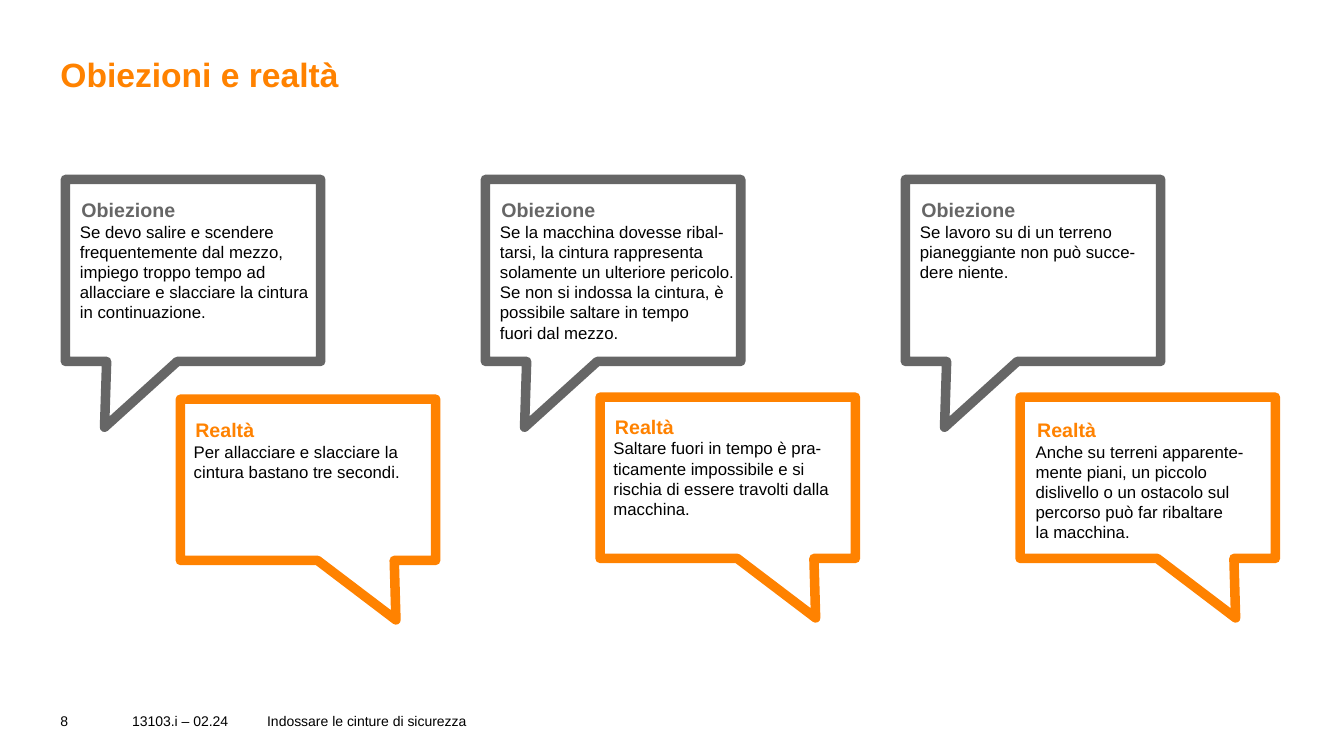
"""Build the slide that answers three objections to seat belts with speech bubbles."""

from dataclasses import dataclass

import pptx
import pptx.dml.color
import pptx.enum.text
import pptx.oxml.ns
import pptx.shapes.autoshape
import pptx.slide
import pptx.text.text
import pptx.util
from lxml import etree

Pt = pptx.util.Pt


@dataclass(frozen=True)
class Theme:
    font: str = "Arial"
    orange: str = "FF8200"
    grey: str = "666666"
    black: str = "000000"
    white: str = "FFFFFF"
    title: float = 24
    heading: float = 14
    body: float = 12
    footer: float = 10
    outline: float = 6.8


@dataclass(frozen=True)
class BubbleKind:
    heading: str
    color: str
    points: tuple[tuple[float, float], ...]


@dataclass(frozen=True)
class Bubble:
    kind: BubbleKind
    left: float
    top: float
    text_left: float
    text_top: float
    body: str


@dataclass(frozen=True)
class Label:
    text: str
    left: float
    width: float


THEME = Theme()
PITCH = 300
OBJECTION = BubbleKind("Obiezione", THEME.grey, (
    (182.4, 0), (0, 0), (0, 130), (29.5, 130), (28, 177), (80, 130), (182.4, 130)))
REALITY = BubbleKind("Realtà", THEME.orange, (
    (0, 0), (182.4, 0), (182.4, 115.2), (152.8, 115.2), (154, 157.7), (98, 115.2), (0, 115.2)))

OBJECTIONS = (
    "Se devo salire e scendere\nfrequentemente dal mezzo,\nimpiego troppo tempo ad\n"
    "allacciare e slacciare la cintura\nin continuazione.",
    "Se la macchina dovesse ribal-\ntarsi, la cintura rappresenta\n"
    "solamente un ulteriore pericolo.\nSe non si indossa la cintura, è\n"
    "possibile saltare in tempo\nfuori dal mezzo.",
    "Se lavoro su di un terreno\npianeggiante non può succe-\ndere niente.",
)
REALITIES = (
    Bubble(REALITY, 128.8, 285.1, 131.7, 295.2,
           "Per allacciare e slacciare la\ncintura bastano tre secondi."),
    Bubble(REALITY, 428.6, 283.7, 431.5, 293,
           "Saltare fuori in tempo è pra-\nticamente impossibile e si\n"
           "rischia di essere travolti dalla\nmacchina."),
    Bubble(REALITY, 728.6, 283.7, 733, 295.2,
           "Anche su terreni apparente-\nmente piani, un piccolo\n"
           "dislivello o un ostacolo sul\npercorso può far ribaltare\nla macchina."),
)
BUBBLES = tuple(
    Bubble(OBJECTION, 46.7 + i * PITCH, 128.2, 50.4 + i * PITCH, 138.2, body)
    for i, body in enumerate(OBJECTIONS)
) + REALITIES
FOOTER = (
    Label("13103.i – 02.24", 94.3, 85),
    Label("Indossare le cinture di sicurezza", 190.8, 617.8),
    Label("8", 43.2, 39.6),
)


def rgb(color: str) -> pptx.dml.color.RGBColor:
    """Turn a hex string into a colour."""
    return pptx.dml.color.RGBColor.from_string(color)


def write(p: pptx.text.text._Paragraph, text: str, *, size: float,
          color: str = THEME.black, bold: bool = False,
          spacing: float | None = None, indent: float = 0) -> None:
    """Write text into a paragraph, with a line break at each newline."""
    if indent:
        p._p.get_or_add_pPr().set("marL", str(Pt(indent)))
    if spacing:
        p.line_spacing = Pt(spacing)
    for i, line in enumerate(text.split("\n")):
        if i:
            p.add_line_break()
        r = p.add_run()
        r.text = line
        r.font.name = THEME.font
        r.font.size = Pt(size)
        r.font.bold = bold
        r.font.color.rgb = rgb(color)


def add_box(s: pptx.slide.Slide, left: float, top: float, width: float,
            height: float) -> pptx.text.text.TextFrame:
    """Add a wrapping text box without margins."""
    tf = s.shapes.add_textbox(Pt(left), Pt(top), Pt(width), Pt(height)).text_frame
    tf.word_wrap = True
    tf.margin_left = tf.margin_right = tf.margin_top = tf.margin_bottom = 0
    return tf


def add_outline(s: pptx.slide.Slide, b: Bubble) -> pptx.shapes.autoshape.Shape:
    """Draw the outline of a speech bubble with rounded joins."""
    points = [(Pt(b.left + x), Pt(b.top + y)) for x, y in b.kind.points]
    builder = s.shapes.build_freeform(*points[0])
    builder.add_line_segments(points[1:], close=True)
    sp = builder.convert_to_shape()
    sp.shadow.inherit = False
    sp.fill.solid()
    sp.fill.fore_color.rgb = rgb(THEME.white)
    sp.line.color.rgb = rgb(b.kind.color)
    sp.line.width = Pt(THEME.outline)
    etree.SubElement(sp.line._get_or_add_ln(), pptx.oxml.ns.qn("a:round"))
    return sp


def add_bubble_text(s: pptx.slide.Slide, b: Bubble) -> None:
    """Add the heading and body of a speech bubble."""
    tf = add_box(s, b.text_left, b.text_top, 176.4, 111.6)
    write(tf.paragraphs[0], b.kind.heading, size=THEME.heading, color=b.kind.color,
          bold=True, spacing=20, indent=7.8)
    write(tf.add_paragraph(), b.body, size=THEME.body, spacing=14.4, indent=6.7)


def main() -> None:
    """Build and save the presentation."""
    prs = pptx.Presentation()
    prs.slide_width, prs.slide_height = Pt(960), Pt(540)
    s = prs.slides.add_slide(prs.slide_layouts[6])
    tf = add_box(s, 43.2, 37.4, 873.4, 67.7)
    write(tf.paragraphs[0], "Obiezioni e realtà", size=THEME.title,
          color=THEME.orange, bold=True, spacing=30)
    for label in FOOTER:
        tf = add_box(s, label.left, 507.6, label.width, 14.4)
        tf.vertical_anchor = pptx.enum.text.MSO_ANCHOR.MIDDLE
        write(tf.paragraphs[0], label.text, size=THEME.footer)
    for b in BUBBLES:
        add_outline(s, b)
    for b in BUBBLES:
        add_bubble_text(s, b)
    prs.save("out.pptx")


if __name__ == "__main__":
    main()
